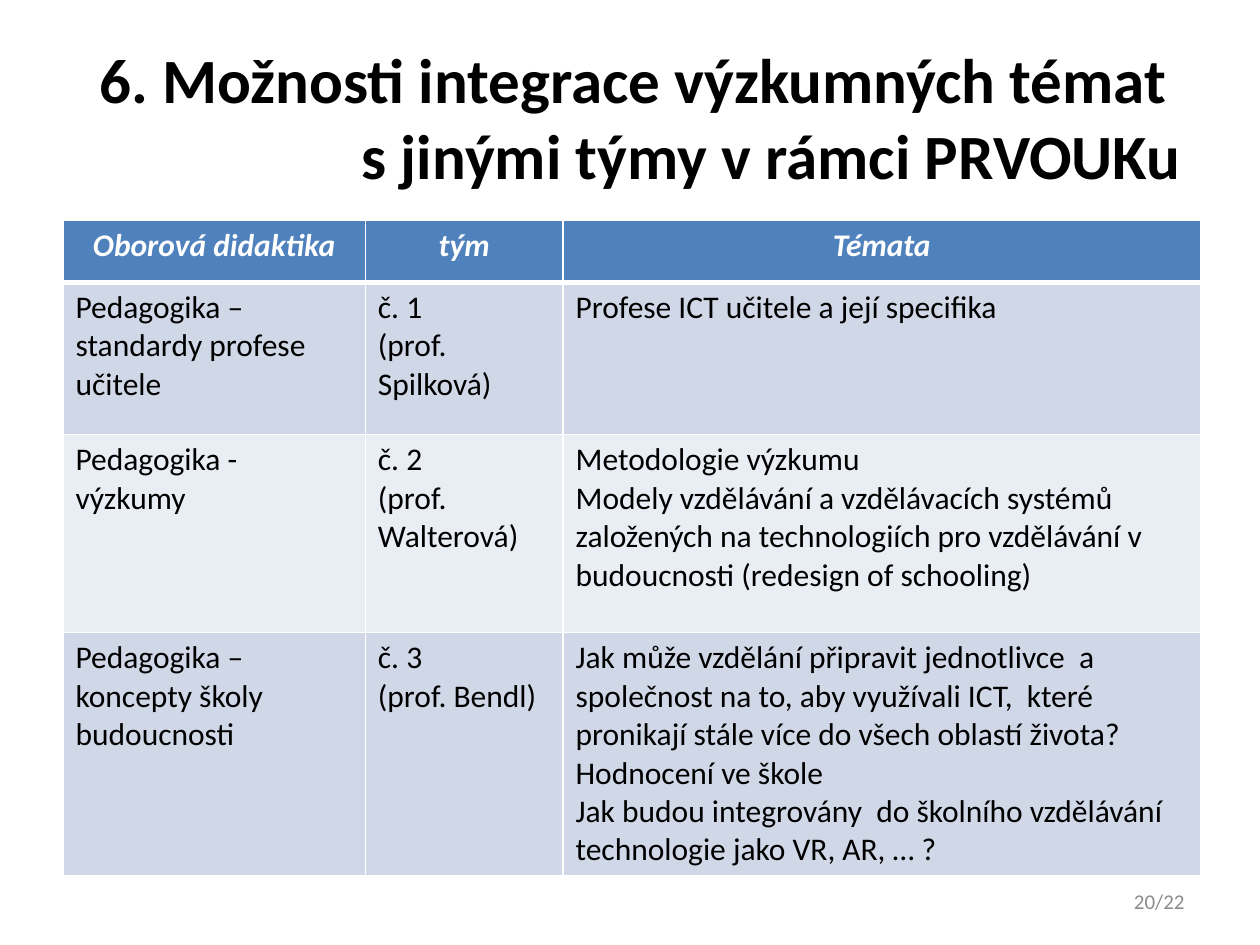
import dataclasses

import lxml.etree
import pptx
import pptx.dml.color
import pptx.enum.text
import pptx.oxml.ns
import pptx.util

Pt = pptx.util.Pt
RGB = pptx.dml.color.RGBColor.from_string
ALIGN = pptx.enum.text.PP_ALIGN
ANCHOR = pptx.enum.text.MSO_ANCHOR


@dataclasses.dataclass(frozen=True)
class Theme:
    face: str = "Calibri"
    title_size: int = 36
    table_size: int = 18
    page_size: int = 12
    ink: str = "000000"
    paper: str = "FFFFFF"
    muted: str = "8C8C8C"
    header: str = "4F81BD"
    bands: tuple = ("D0D8E8", "E9EDF4")


@dataclasses.dataclass(frozen=True)
class Box:
    left: float
    top: float
    width: float
    height: float

    def lengths(self):
        return [Pt(value) for value in dataclasses.astuple(self)]


THEME = Theme()

TITLE = "6. Možnosti integrace výzkumných témat \vs jinými týmy v rámci PRVOUKu"
HEADINGS = ("Oborová didaktika", "tým", "Témata")
TEAMS = (
    ("Pedagogika – standardy profese učitele",
     "č. 1\v(prof. Spilková)",
     "Profese ICT učitele a její specifika"),
    ("Pedagogika - výzkumy",
     "č. 2\v(prof. Walterová)",
     "Metodologie výzkumu\n"
     "Modely vzdělávání a vzdělávacích systémů založených na technologiích "
     "pro vzdělávání v budoucnosti (redesign of schooling)"),
    ("Pedagogika – koncepty školy budoucnosti",
     "č. 3\n(prof. Bendl)",
     "Jak může vzdělání připravit jednotlivce  a společnost na to, aby "
     "využívali ICT,  které pronikají stále více do všech oblastí života?\n"
     "Hodnocení ve škole\n"
     "Jak budou integrovány  do školního vzdělávání technologie jako VR, AR, … ?"),
)
COLUMN_SHARES = (2.4, 1.57, 5.06)
ROW_SHARES = (0.49, 1.21, 1.57, 1.93)


def write(frame, text, size, color, align, bold=False, italic=False):
    frame.word_wrap = True
    frame.text = text
    for paragraph in frame.paragraphs:
        paragraph.alignment = align
        font = paragraph.font
        font.name = THEME.face
        font.size = Pt(size)
        font.bold = bold
        font.italic = italic
        font.color.rgb = RGB(color)


def set_borders(cell, widths):
    properties = cell._tc.get_or_add_tcPr()
    for side, width in widths.items():
        line = lxml.etree.SubElement(
            properties, pptx.oxml.ns.qn(f"a:ln{side}"), w=str(Pt(width)))
        fill = lxml.etree.SubElement(line, pptx.oxml.ns.qn("a:solidFill"))
        lxml.etree.SubElement(
            fill, pptx.oxml.ns.qn("a:srgbClr"), val=THEME.paper)


def place_title(slide, box):
    title = slide.shapes.title
    title.left, title.top, title.width, title.height = box.lengths()
    write(title.text_frame, TITLE, THEME.title_size, THEME.ink,
          ALIGN.RIGHT, bold=True)
    title.text_frame.vertical_anchor = ANCHOR.MIDDLE
    title.text_frame.auto_size = pptx.enum.text.MSO_AUTO_SIZE.NONE


def place_teams(slide, box):
    rows = (HEADINGS, *TEAMS)
    table = slide.shapes.add_table(
        len(rows), len(HEADINGS), *box.lengths()).table
    for column, share in zip(table.columns, COLUMN_SHARES):
        column.width = Pt(box.width * share / sum(COLUMN_SHARES))
    for row, share in zip(table.rows, ROW_SHARES):
        row.height = Pt(box.height * share / sum(ROW_SHARES))

    for row_index, texts in enumerate(rows):
        heading = row_index == 0
        background = (THEME.header if heading
                      else THEME.bands[(row_index - 1) % len(THEME.bands)])
        borders = {"L": 1, "R": 1,
                   "T": 3 if row_index == 1 else 1,
                   "B": 3 if heading else 1}
        for column_index, text in enumerate(texts):
            cell = table.cell(row_index, column_index)
            set_borders(cell, borders)
            cell.fill.solid()
            cell.fill.fore_color.rgb = RGB(background)
            write(cell.text_frame, text, THEME.table_size,
                  THEME.paper if heading else THEME.ink,
                  ALIGN.CENTER if heading else ALIGN.LEFT,
                  bold=heading, italic=heading)


def place_page_number(slide, box):
    page = slide.shapes.add_textbox(*box.lengths()).text_frame
    write(page, "20/22", THEME.page_size, THEME.muted, ALIGN.RIGHT)
    page.vertical_anchor = ANCHOR.MIDDLE


def main():
    deck = pptx.Presentation()
    deck.slide_width, deck.slide_height = Pt(720), Pt(540)
    slide = deck.slides.add_slide(deck.slide_layouts.get_by_name("Title Only"))
    place_title(slide, Box(34, 21.6, 648, 90))
    place_teams(slide, Box(36, 126, 650, 374.4))
    place_page_number(slide, Box(516, 500.4, 168, 28.8))
    deck.save("out.pptx")


if __name__ == "__main__":
    main()
